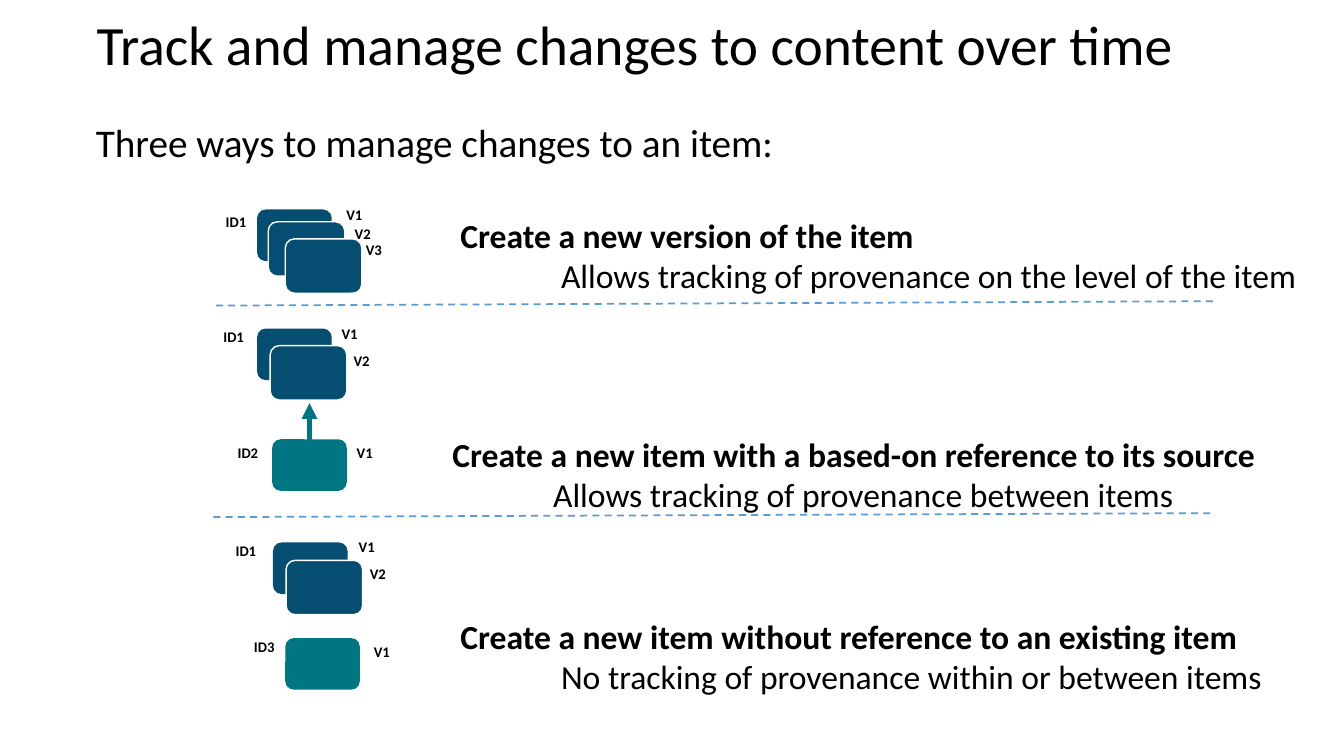
"""Builds a slide on three ways to manage changes to a content item."""
from dataclasses import dataclass

from lxml import etree
from pptx import Presentation
from pptx import util as u
from pptx.dml.color import RGBColor
from pptx.enum import dml, shapes, text
from pptx.oxml import ns

TITLE = "Track and manage changes to content over time"
INTRO = "Three ways to manage changes to an item:"

WAYS = [
    ("Create a new version of the item",
     "Allows tracking of provenance on the level of the item", (11.35, 5.28, 21.77, 2.31)),
    ("Create a new item with a based-on reference to its source",
     "Allows tracking of provenance between items", (11.15, 10.8, 20.96, 2.31)),
    ("Create a new item without reference to an existing item",
     "No tracking of provenance within or between items", (11.35, 15.39, 20.9, 2.31)),
]

# Each item: name, name position, colour role, then card and label positions per version.
ITEMS = [
    ("ID1", (5.44, 5.23), "source", [((6.48, 5.28), (8.48, 5.05)),
                                     ((6.76, 5.59), (8.69, 5.54)),
                                     ((7.19, 6.02), (8.97, 5.94))]),
    ("ID1", (5.38, 8.13), "source", [((6.48, 8.28), (8.36, 8.05)),
                                     ((6.81, 8.71), (8.66, 8.74))]),
    ("ID2", (5.74, 11.07), "derived", [((6.86, 11.07), (8.74, 11.07))]),
    ("ID1", (5.69, 13.54), "source", [((6.88, 13.67), (8.79, 13.44)),
                                      ((7.21, 14.12), (9.07, 14.12))]),
    ("ID3", (6.15, 15.95), "derived", [((7.19, 16.08), (9.17, 16.08))]),
]

DIVIDERS = [(5.44, 7.7, 30.63, 7.59), (5.38, 13.03, 30.61, 12.93)]
REFERENCE = (7.8, 12.37, 7.8, 10.16)
BACK_CARD, FRONT_CARD = (1.88, 1.3), (1.93, 1.37)
NAME_SIZE, VERSION_SIZE = (1.04, 0.71), (0.91, 0.71)


@dataclass(frozen=True)
class Theme:
    font: str = "Calibri"
    ink: str = "000000"
    outline: str = "FFFFFF"
    source: str = "054E72"
    derived: str = "007682"
    divider: str = "5B9BD5"
    title: float = 39.6
    intro: float = 28
    way: float = 24
    label: float = 10.5


THEME = Theme()


def lengths(values):
    return [u.Cm(value) for value in values]


def style(paragraph, size, bold=False):
    font = paragraph.font
    font.name, font.size, font.bold = THEME.font, u.Pt(size), bold
    font.color.rgb = RGBColor.from_string(THEME.ink)


def fill_placeholder(placeholder, box, content, size):
    placeholder.left, placeholder.top, placeholder.width, placeholder.height = lengths(box)
    frame = placeholder.text_frame
    frame.text = content
    frame.auto_size = text.MSO_AUTO_SIZE.NONE
    paragraph = frame.paragraphs[0]
    paragraph.alignment = text.PP_ALIGN.LEFT
    paragraph.line_spacing = 0.9
    style(paragraph, size)
    return paragraph


def add_text(slide, box, lines, size, wrap):
    frame = slide.shapes.add_textbox(*lengths(box)).text_frame
    frame.word_wrap = wrap
    frame.auto_size = text.MSO_AUTO_SIZE.SHAPE_TO_FIT_TEXT
    frame.text = "\n".join(lines)
    for index, paragraph in enumerate(frame.paragraphs):
        style(paragraph, size, bold=index == 0)
        if index:
            paragraph._p.get_or_add_pPr().set("marL", str(u.Cm(2.54)))


def add_card(slide, position, color, front):
    size = FRONT_CARD if front else BACK_CARD
    card = slide.shapes.add_shape(
        shapes.MSO_SHAPE.ROUNDED_RECTANGLE, *lengths(position + size))
    card.shadow.inherit = False
    card.fill.solid()
    card.fill.fore_color.rgb = RGBColor.from_string(color)
    if front:
        card.line.color.rgb = RGBColor.from_string(THEME.outline)
        card.line.width = u.Pt(1)
    else:
        card.line.fill.background()


def add_line(slide, ends, color, width):
    connector = slide.shapes.add_connector(shapes.MSO_CONNECTOR.STRAIGHT, *lengths(ends))
    connector.line.color.rgb = RGBColor.from_string(color)
    connector.line.width = u.Pt(width)
    etree.SubElement(connector._element.spPr, ns.qn("a:effectLst"))
    return connector.line


def add_item(slide, name, name_position, role, versions):
    add_text(slide, name_position + NAME_SIZE, [name], THEME.label, wrap=False)
    for number, (card_position, label_position) in enumerate(versions, 1):
        add_card(slide, card_position, getattr(THEME, role), front=number > 1)
        add_text(slide, label_position + VERSION_SIZE, [f"V{number}"], THEME.label, wrap=False)


def main():
    presentation = Presentation()
    presentation.slide_width, presentation.slide_height = lengths((33.87, 19.05))
    slide = presentation.slides.add_slide(presentation.slide_layouts[1])

    title, body = slide.placeholders
    fill_placeholder(title, (2.18, 0.58, 29.21, 1.22), TITLE, THEME.title)
    title.text_frame.vertical_anchor = text.MSO_ANCHOR.MIDDLE
    intro = fill_placeholder(body, (2.16, 3, 29.21, 15.21), INTRO, THEME.intro)
    intro.space_before = u.Pt(10)
    properties = intro._p.get_or_add_pPr()
    properties.set("marL", "0")
    properties.set("indent", "0")
    etree.SubElement(properties, ns.qn("a:buNone"))
    properties.append(properties.find(ns.qn("a:defRPr")))

    arrow = add_line(slide, REFERENCE, THEME.derived, 3.75)
    etree.SubElement(arrow._get_or_add_ln(), ns.qn("a:tailEnd"), type="triangle")
    for item in ITEMS:
        add_item(slide, *item)
    for ends in DIVIDERS:
        add_line(slide, ends, THEME.divider, 1.25).dash_style = dml.MSO_LINE.DASH
    for heading, detail, box in WAYS:
        add_text(slide, box, [heading, detail], THEME.way, wrap=True)

    presentation.save("out.pptx")


if __name__ == "__main__":
    main()
